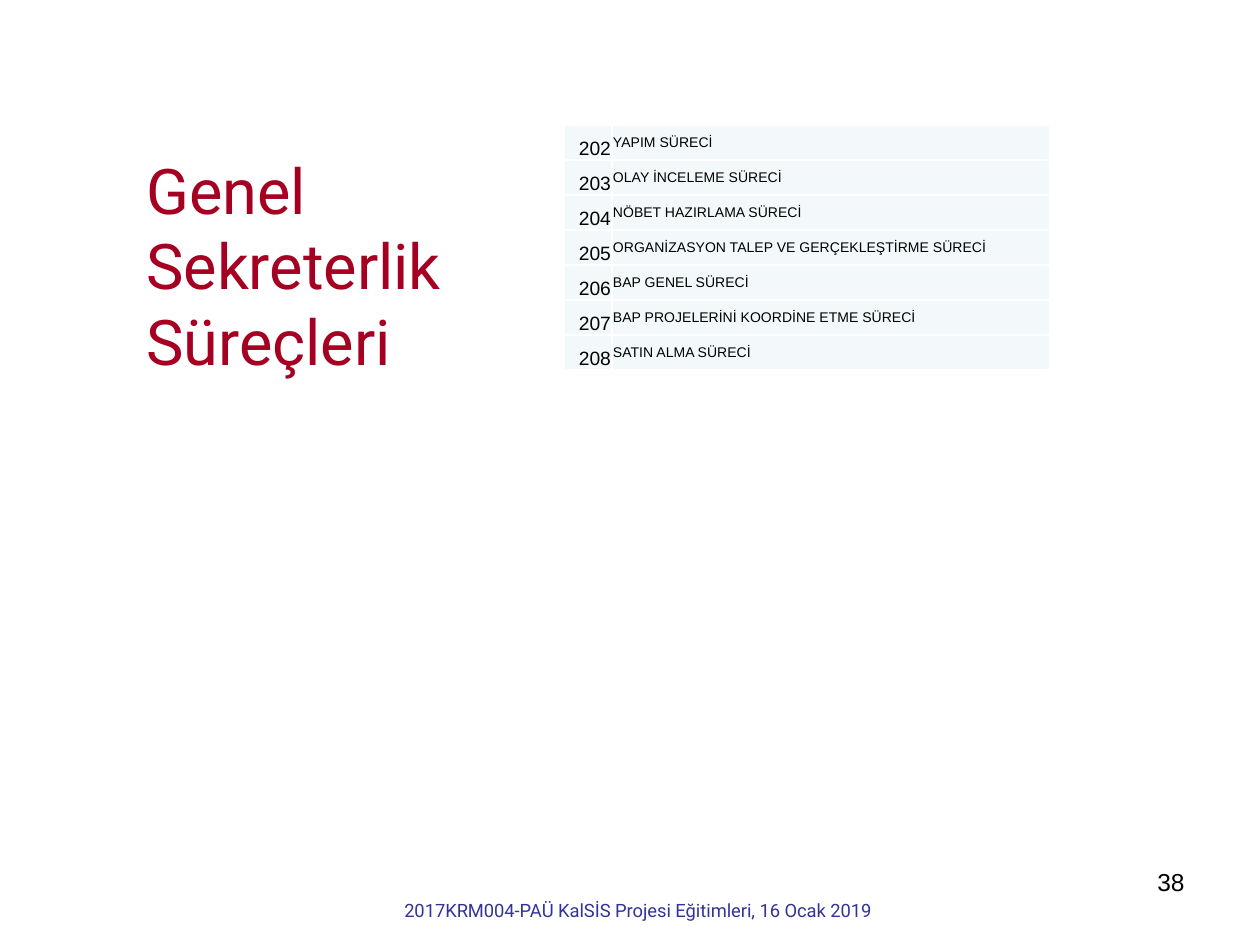
from dataclasses import dataclass

from lxml import etree
from pptx import Presentation
from pptx import util as u
from pptx.dml.color import RGBColor
from pptx.enum import text
from pptx.oxml.ns import qn


@dataclass(frozen=True)
class Theme:
    heading_font: str = "Roboto"
    body_font: str = "Arial"
    heading: str = "A50021"
    footer: str = "333399"
    ink: str = "000000"
    cell: str = "F3F9FA"
    border: str = "FFFFFF"
    heading_size: float = 36
    page_size: float = 14
    code_size: float = 11
    footer_size: float = 10.5
    process_size: float = 8


THEME = Theme()
LEFT, CENTER, RIGHT = text.PP_ALIGN.LEFT, text.PP_ALIGN.CENTER, text.PP_ALIGN.RIGHT

HEADING = ["Genel", "Sekreterlik Süreçleri"]
FOOTER = ["2017KRM004-PAÜ KalSİS Projesi Eğitimleri, 16 Ocak 2019 "]
PAGE = ["38"]
FIRST_CODE = 202
PROCESSES = [
    "YAPIM SÜRECİ",
    "OLAY İNCELEME SÜRECİ",
    "NÖBET HAZIRLAMA SÜRECİ",
    "ORGANİZASYON TALEP VE GERÇEKLEŞTİRME SÜRECİ",
    "BAP GENEL SÜRECİ",
    "BAP PROJELERİNİ KOORDİNE ETME SÜRECİ",
    "SATIN ALMA SÜRECİ",
]
TABLE_LEFT, TABLE_TOP, ROW_HEIGHT = 564, 125, 35
COLUMN_WIDTHS = [48, 438]


def px(length):
    return u.Emu(round(length * 914400 / 126))


def write(frame, lines, font, size, color, align):
    for index, line in enumerate(lines):
        paragraph = frame.add_paragraph() if index else frame.paragraphs[0]
        paragraph.alignment = align
        run = paragraph.add_run()
        run.text = line
        run.font.name = font
        run.font.size = u.Pt(size)
        run.font.color.rgb = RGBColor.from_string(color)


def add_text(slide, box, lines, font, size, color, align):
    frame = slide.shapes.add_textbox(*map(px, box)).text_frame
    frame.word_wrap = True
    write(frame, lines, font, size, color, align)


def style_cell(cell, anchor):
    cell.margin_left = cell.margin_right = cell.margin_top = px(1)
    cell.margin_bottom = 0
    cell.vertical_anchor = anchor
    properties = cell._tc.get_or_add_tcPr()
    for side in ("lnL", "lnR", "lnT", "lnB"):
        line = etree.SubElement(properties, qn(f"a:{side}"), w=str(u.Pt(1)))
        fill = etree.SubElement(line, qn("a:solidFill"))
        etree.SubElement(fill, qn("a:srgbClr"), val=THEME.border)
    cell.fill.solid()
    cell.fill.fore_color.rgb = RGBColor.from_string(THEME.cell)


def add_processes(slide):
    box = (TABLE_LEFT, TABLE_TOP, sum(COLUMN_WIDTHS), ROW_HEIGHT * len(PROCESSES))
    table = slide.shapes.add_table(len(PROCESSES), 2, *map(px, box)).table
    table.first_row = table.horz_banding = False
    for column, width in zip(table.columns, COLUMN_WIDTHS):
        column.width = px(width)
    for index, process in enumerate(PROCESSES):
        table.rows[index].height = px(ROW_HEIGHT)
        entries = [
            (str(FIRST_CODE + index), THEME.code_size, RIGHT, text.MSO_ANCHOR.BOTTOM),
            (process, THEME.process_size, LEFT, text.MSO_ANCHOR.MIDDLE),
        ]
        for column, (entry, size, align, anchor) in enumerate(entries):
            cell = table.cell(index, column)
            style_cell(cell, anchor)
            write(cell.text_frame, [entry], THEME.body_font, size, THEME.ink, align)


def main():
    deck = Presentation()
    deck.slide_width, deck.slide_height = px(1260), px(945)
    slide = deck.slides.add_slide(deck.slide_layouts[6])
    add_text(slide, (362, 893, 557, 39), FOOTER,
             THEME.heading_font, THEME.footer_size, THEME.footer, CENTER)
    add_text(slide, (903, 861, 294, 65), PAGE,
             THEME.body_font, THEME.page_size, THEME.ink, RIGHT)
    add_processes(slide)
    add_text(slide, (134, 145, 377, 238), HEADING,
             THEME.heading_font, THEME.heading_size, THEME.heading, LEFT)
    deck.save("out.pptx")


if __name__ == "__main__":
    main()
